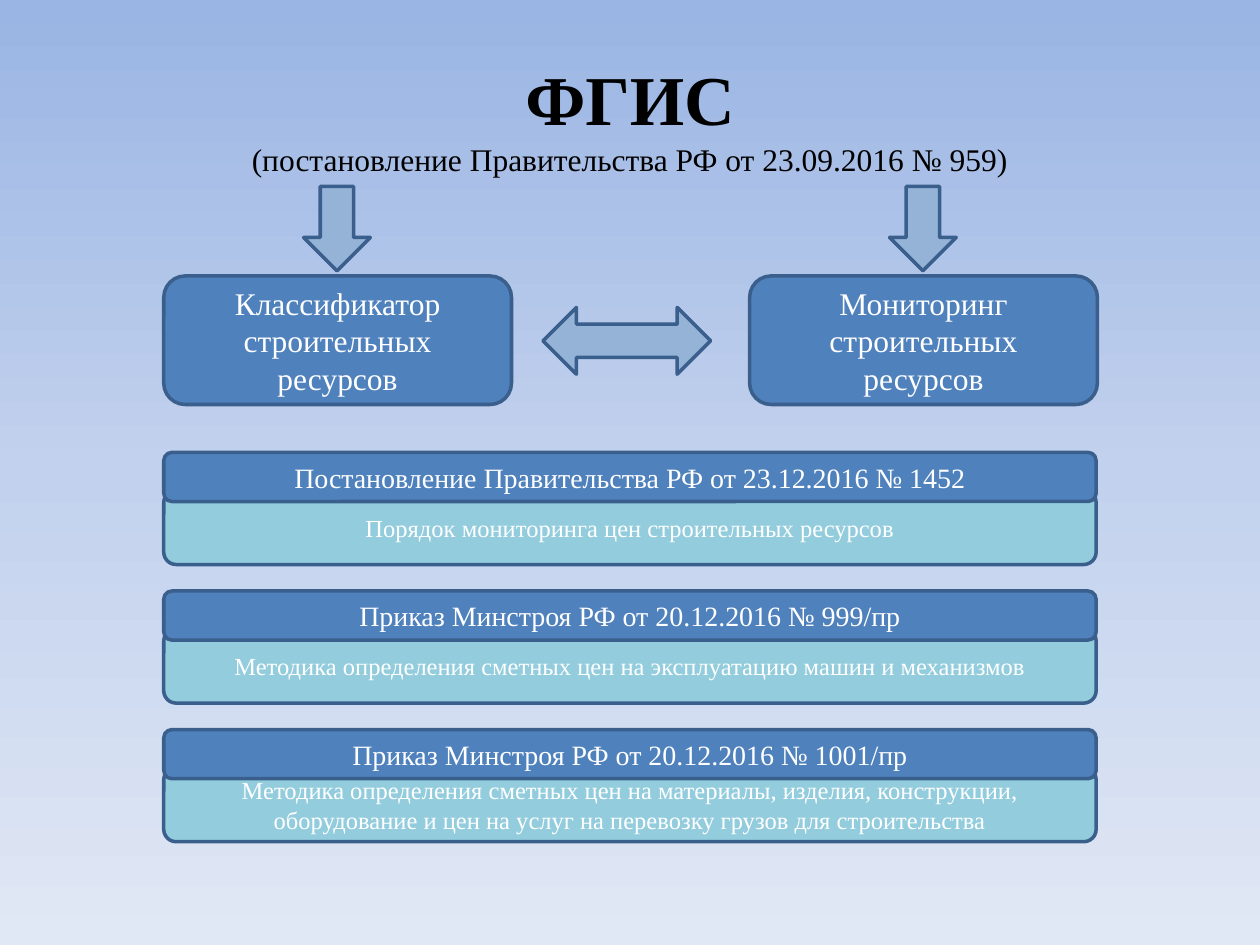
"""Build the slide on the ФГИС system and the acts that support it."""
import copy

import pptx
import pptx.dml.color
import pptx.enum.shapes
import pptx.enum.text
import pptx.util
from pptx.util import Inches

FONT = "Times New Roman"
SHAPE = pptx.enum.shapes.MSO_SHAPE
CENTER = pptx.enum.text.PP_ALIGN.CENTER
MIDDLE = pptx.enum.text.MSO_ANCHOR.MIDDLE
BLUE, TEAL, ARROW, OUTLINE = "4F81BD", "93CDDD", "95B3D7", "3A5F8C"


def rgb(value):
    return pptx.dml.color.RGBColor.from_string(value)


def add_block(shapes, kind, left, top, width, height, fill, text="", size=18):
    shape = shapes.add_shape(
        kind, Inches(left), Inches(top), Inches(width), Inches(height))
    shape.shadow.inherit = False
    shape.fill.solid()
    shape.fill.fore_color.rgb = rgb(fill)
    shape.line.color.rgb = rgb(OUTLINE)
    shape.line.width = pptx.util.Pt(2)
    if text:
        shape.text_frame.text = text
        shape.text_frame.word_wrap = True
        shape.text_frame.vertical_anchor = MIDDLE
        paragraph = shape.text_frame.paragraphs[0]
        paragraph.alignment = CENTER
        paragraph.font.name = FONT
        paragraph.font.size = pptx.util.Pt(size)
        paragraph.font.color.rgb = rgb("FFFFFF")


presentation = pptx.Presentation()
presentation.slide_width = Inches(10)
presentation.slide_height = Inches(7.5)
slide = presentation.slides.add_slide(presentation.slide_layouts[5])

background = slide.background.fill
background.gradient()
background.gradient_angle = 270
stop_list = slide.element.xpath(".//a:gsLst")[0]
stop_list.append(copy.deepcopy(stop_list[0]))
stops = [(0, "9AB5E4"), (0.5, "C2D1ED"), (1, "E1E8F5")]
for stop, (position, color) in zip(background.gradient_stops, stops):
    stop.position = position
    stop.color.rgb = rgb(color)

title = slide.shapes.title
title.left, title.top = Inches(0.5), Inches(0.3)
title.width, title.height = Inches(9), Inches(1.25)
title.text_frame.vertical_anchor = MIDDLE
paragraph = title.text_frame.paragraphs[0]
paragraph.alignment = CENTER
paragraph.font.name = FONT
paragraph.font.color.rgb = rgb("000000")
heading = paragraph.add_run()
heading.text = "ФГИС"
heading.font.size = pptx.util.Pt(40)
heading.font.bold = True
paragraph.add_line_break()
decree = paragraph.add_run()
decree.text = "(постановление Правительства РФ от 23.09.2016 № 959)"
decree.font.size = pptx.util.Pt(18)
decree.font.bold = False

system = slide.shapes.add_group_shape().shapes
parts = [
    (1.3, "Классификатор строительных ресурсов"),
    (5.95, "Мониторинг строительных ресурсов"),
]
for left, text in parts:
    add_block(system, SHAPE.ROUNDED_RECTANGLE, left, 2.19, 2.76, 1.02, BLUE, text)
    add_block(system, SHAPE.DOWN_ARROW, left + 1.11, 1.48, 0.53, 0.67, ARROW)
add_block(system, SHAPE.LEFT_RIGHT_ARROW, 4.31, 2.44, 1.33, 0.53, ARROW)

acts = [
    ("Постановление Правительства РФ от 23.12.2016 № 1452",
     "Порядок мониторинга цен строительных ресурсов"),
    ("Приказ Минстроя РФ от 20.12.2016 № 999/пр",
     "Методика определения сметных цен на эксплуатацию машин и механизмов"),
    ("Приказ Минстроя РФ от 20.12.2016 № 1001/пр",
     "Методика определения сметных цен на материалы, изделия, конструкции, "
     "оборудование и цен на услуг на перевозку грузов для строительства"),
]
for index, (act, subject) in enumerate(acts):
    top = 3.59 + 1.1 * index
    card = slide.shapes.add_group_shape().shapes
    add_block(card, SHAPE.ROUNDED_RECTANGLE, 1.3, top + 0.3, 7.4, 0.59, TEAL, subject, 14)
    add_block(card, SHAPE.ROUNDED_RECTANGLE, 1.3, top, 7.4, 0.39, BLUE, act, 16)

presentation.save("out.pptx")
